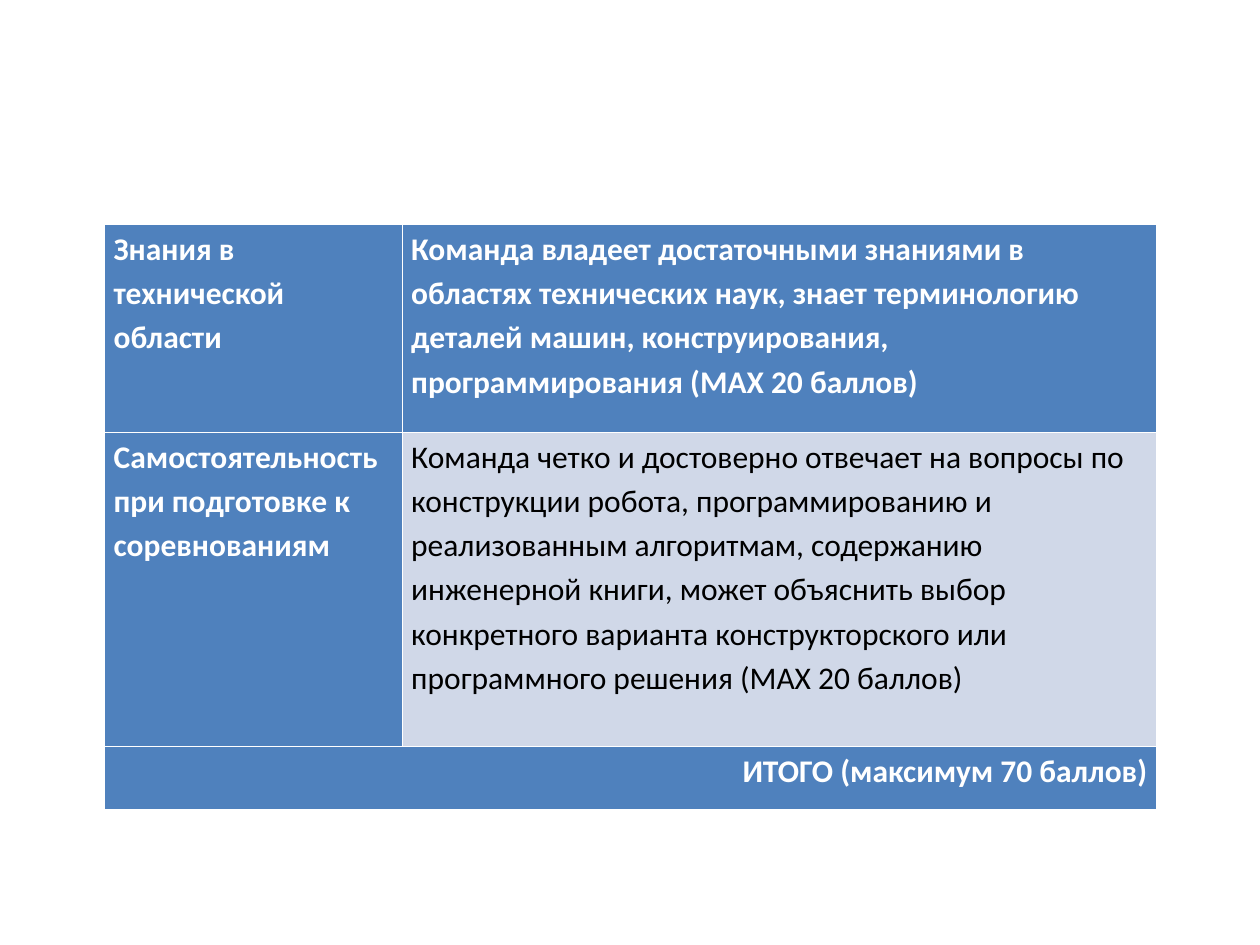
from dataclasses import dataclass

from pptx import Presentation
from pptx.dml.color import RGBColor
from pptx.enum.text import PP_ALIGN
from pptx.util import Cm, Pt

LEFT, RIGHT = PP_ALIGN.LEFT, PP_ALIGN.RIGHT


@dataclass(frozen=True)
class Theme:
    font: str = "Calibri"
    size: Pt = Pt(18)
    accent: RGBColor = RGBColor(0x4F, 0x81, 0xBD)
    band: RGBColor = RGBColor(0xD0, 0xD8, 0xE8)
    light: RGBColor = RGBColor(0xFF, 0xFF, 0xFF)
    dark: RGBColor = RGBColor(0x00, 0x00, 0x00)


theme = Theme()

prs = Presentation()
prs.slide_width, prs.slide_height = Cm(25.4), Cm(19.05)
slide = prs.slides.add_slide(prs.slide_layouts[6])

column_widths = [Cm(6), Cm(15.2)]
row_heights = [Cm(4.19), Cm(6.33), Cm(1.27)]

# The default table style supplies the white rules, thicker below the first row.
criteria = slide.shapes.add_table(
    len(row_heights), len(column_widths), Cm(2.11), Cm(4.53),
    sum(column_widths), sum(row_heights)).table
criteria.first_col = True
for column, width in zip(criteria.columns, column_widths):
    column.width = width
for row, height in zip(criteria.rows, row_heights):
    row.height = height
criteria.cell(2, 0).merge(criteria.cell(2, 1))

# row, column, text, emphasised, alignment
entries = [
    (0, 0, "Знания в технической области", True, LEFT),
    (0, 1, "Команда владеет достаточными знаниями в областях технических наук, "
           "знает терминологию деталей машин, конструирования, "
           "программирования (MAX 20 баллов)", True, LEFT),
    (1, 0, "Самостоятельность при подготовке к соревнованиям", True, LEFT),
    (1, 1, "Команда четко и достоверно отвечает на вопросы по конструкции робота, "
           "программированию и реализованным алгоритмам, содержанию инженерной "
           "книги, может объяснить выбор конкретного варианта конструкторского "
           "или программного решения (МАХ 20 баллов)", False, LEFT),
    (2, 0, "ИТОГО (максимум 70 баллов)", True, RIGHT),
]

for row, column, text, emphasised, alignment in entries:
    cell = criteria.cell(row, column)
    cell.margin_left = cell.margin_right = Cm(0.18)
    cell.margin_top = cell.margin_bottom = 0
    cell.fill.solid()
    cell.fill.fore_color.rgb = theme.accent if emphasised else theme.band
    cell.text = text
    paragraph = cell.text_frame.paragraphs[0]
    paragraph.alignment = alignment
    paragraph.line_spacing = 1.15
    paragraph.font.name = theme.font
    paragraph.font.size = theme.size
    paragraph.font.bold = emphasised
    paragraph.font.color.rgb = theme.light if emphasised else theme.dark

prs.save("out.pptx")
